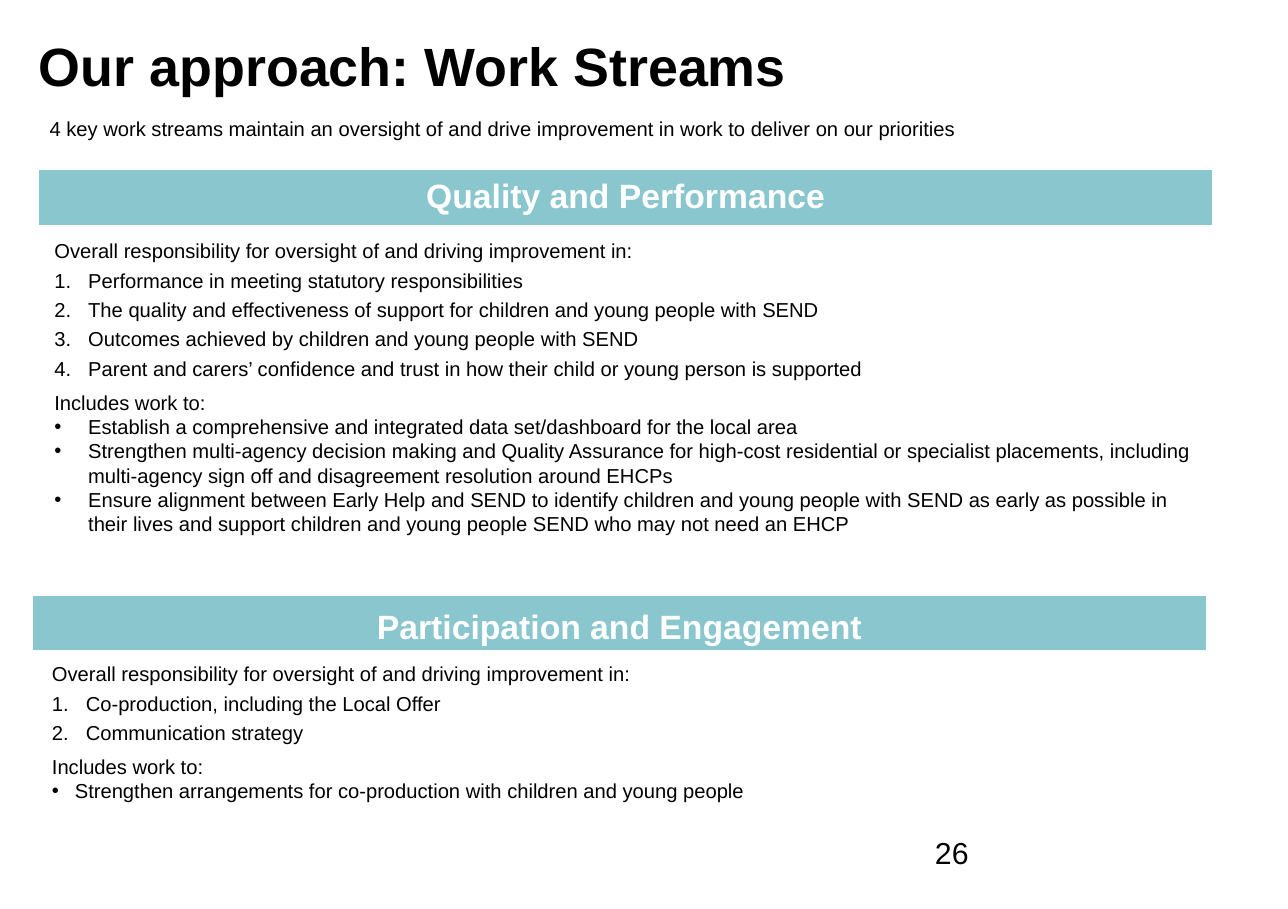
from dataclasses import dataclass

from lxml import etree
from pptx import Presentation
from pptx.dml import color
from pptx.enum import shapes, text
from pptx.oxml import ns
from pptx.util import Cm, Pt

BLACK, WHITE, TEAL = "000000", "FFFFFF", "8AC6CD"
BANNER_WIDTH, BANNER_HEIGHT, TEXT_WIDTH = 24.66, 1.22, 24.56
LIST_INDENT = 0.71
RESPONSIBILITY = "Overall responsibility for oversight of and driving improvement in:"


@dataclass
class WorkStream:
    name: str
    banner_left: float
    banner_top: float
    banner_inset: float
    line_spacing: float
    text_left: float
    text_top: float
    text_height: float
    bullet_indent: float
    areas: list[str]
    tasks: list[str]


STREAMS = [
    WorkStream(
        "Quality and Performance", 0.79, 3.53, 0.03, 0.9, 0.89, 4.88, 6.53, LIST_INDENT,
        ["Performance in meeting statutory responsibilities",
         "The quality and effectiveness of support for children and young people with SEND",
         "Outcomes achieved by children and young people with SEND",
         "Parent and carers’ confidence and trust in how their child or young person is supported"],
        ["Establish a comprehensive and integrated data set/dashboard for the local area",
         "Strengthen multi-agency decision making and Quality Assurance for high-cost residential "
         "or specialist placements, including multi-agency sign off and disagreement resolution "
         "around EHCPs",
         "Ensure alignment between Early Help and SEND to identify children and young people with "
         "SEND as early as possible in their lives and support children and young people SEND who "
         "may not need an EHCP"]),
    WorkStream(
        "Participation and Engagement", 0.66, 12.45, 0.13, 1.0, 0.84, 13.74, 3.25, 0.48,
        ["Co-production, including the Local Offer", "Communication strategy"],
        ["Strengthen arrangements for co-production with children and young people"]),
]


def rgb(value: str) -> color.RGBColor:
    return color.RGBColor.from_string(value)


def style(para, size: float, colour: str = BLACK, bold: bool = False) -> None:
    para.font.name = "Arial"
    para.font.size = Pt(size)
    para.font.bold = bold
    para.font.color.rgb = rgb(colour)


def add_bullet(para, tag: str, indent: float, **attributes: str) -> None:
    """Give a paragraph a hanging indent and a bullet or number."""
    properties = para._p.get_or_add_pPr()
    properties.set("marL", str(Cm(indent)))
    properties.set("indent", str(-Cm(indent)))
    etree.SubElement(properties, ns.qn("a:buFont"), typeface="Arial")
    etree.SubElement(properties, ns.qn(tag), **attributes)


def add_text(page, left: float, top: float, width: float, height: float,
             content: str, size: float = 12):
    box = page.shapes.add_textbox(Cm(left), Cm(top), Cm(width), Cm(height))
    box.text_frame.word_wrap = True
    para = box.text_frame.paragraphs[0]
    para.text = content
    style(para, size)
    return box.text_frame


def add_line(frame, content: str, before: float = 0, tag: str = "",
             indent: float = 0, **attributes: str) -> None:
    para = frame.add_paragraph()
    para.text = content
    para.space_before = Pt(before)
    if tag:
        add_bullet(para, tag, indent, **attributes)
    style(para, 12)


def add_banner(page, stream: WorkStream) -> None:
    banner = page.shapes.add_shape(
        shapes.MSO_SHAPE.RECTANGLE, Cm(stream.banner_left), Cm(stream.banner_top),
        Cm(BANNER_WIDTH), Cm(BANNER_HEIGHT))
    banner.shadow.inherit = False
    banner.fill.solid()
    banner.fill.fore_color.rgb = rgb(TEAL)
    banner.line.color.rgb = rgb(WHITE)
    banner.line.width = Pt(2)
    frame = banner.text_frame
    frame.margin_left = frame.margin_right = frame.margin_bottom = Cm(0.03)
    frame.margin_top = Cm(stream.banner_inset)
    frame.vertical_anchor = text.MSO_ANCHOR.MIDDLE
    para = frame.paragraphs[0]
    para.text = stream.name
    para.alignment = text.PP_ALIGN.CENTER
    para.line_spacing = stream.line_spacing
    style(para, 20, WHITE, True)


def add_stream(page, stream: WorkStream) -> None:
    add_banner(page, stream)
    frame = add_text(page, stream.text_left, stream.text_top, TEXT_WIDTH,
                     stream.text_height, RESPONSIBILITY)
    for area in stream.areas:
        add_line(frame, area, 3, "a:buAutoNum", LIST_INDENT, type="arabicPeriod")
    add_line(frame, "Includes work to:", 6)
    for task in stream.tasks:
        add_line(frame, task, 0, "a:buChar", stream.bullet_indent, char="•")


def add_title(page) -> None:
    title = page.shapes.title
    title.left, title.top, title.width, title.height = Cm(-0.43), Cm(0.43), Cm(27), Cm(1.88)
    frame = title.text_frame
    frame.auto_size = text.MSO_AUTO_SIZE.NONE
    frame.vertical_anchor = text.MSO_ANCHOR.MIDDLE
    para = frame.paragraphs[0]
    para.text = "Our approach: Work Streams"
    para.alignment = text.PP_ALIGN.LEFT
    para._p.get_or_add_pPr().set("marL", str(Cm(0.99)))
    style(para, 32, bold=True)


def main() -> None:
    deck = Presentation()
    deck.slide_width, deck.slide_height = Cm(27), Cm(19.05)
    page = deck.slides.add_slide(deck.slide_layouts.get_by_name("Title Only"))

    # Title and introduction
    add_title(page)
    add_text(page, 0.79, 2.31, TEXT_WIDTH, 0.76,
             "4 key work streams maintain an oversight of and drive improvement "
             "in work to deliver on our priorities")

    # Work streams
    for stream in STREAMS:
        add_stream(page, stream)

    # Page number
    add_text(page, 19.35, 17.35, 6.3, 1.32, "26", 18)
    deck.save("out.pptx")


if __name__ == "__main__":
    main()
